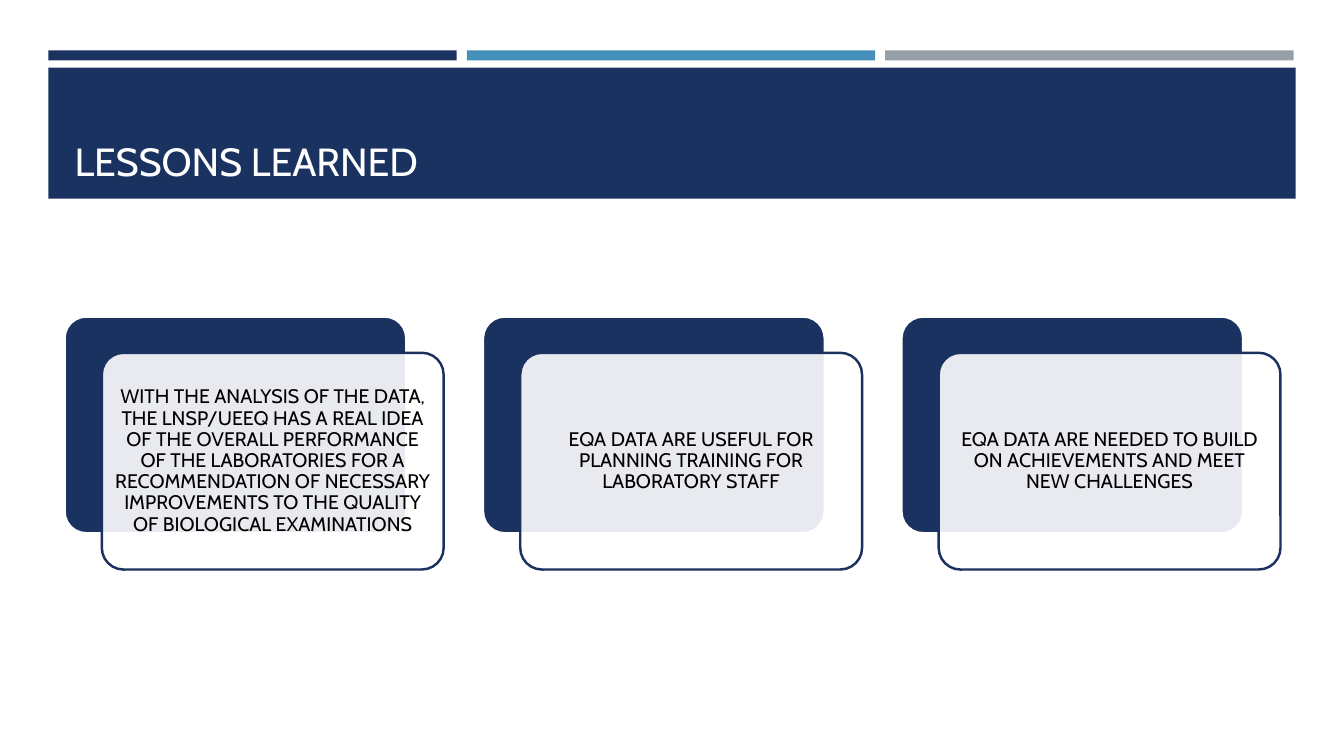
from pptx import Presentation
from pptx.dml.color import RGBColor as Rgb
from pptx.enum.shapes import MSO_SHAPE as Preset
from pptx.enum.text import MSO_ANCHOR as Anchor, PP_ALIGN as Align
from pptx.oxml.ns import qn
from pptx.util import Inches, Pt
from lxml.etree import SubElement

COLORS = {
    "navy": "1A3260",
    "blue": "4590B8",
    "grey": "969FA7",
    "white": "FFFFFF",
    "title": "FFFEFF",
    "text": "000000",
}
FONT = "Cabin"
SLIDE_WIDTH, SLIDE_HEIGHT = 13.33, 7.5
COLUMN_STEP = 4.15
CARD_WIDTH, CARD_HEIGHT = 3.39, 2.15
CARD_SHIFT_X, CARD_SHIFT_Y = 0.37, 0.36
LESSONS = [
    "WITH THE ANALYSIS OF THE DATA, THE LNSP/UEEQ HAS A REAL IDEA OF THE "
    "OVERALL PERFORMANCE OF THE LABORATORIES FOR A RECOMMENDATION OF "
    "NECESSARY IMPROVEMENTS TO THE QUALITY OF BIOLOGICAL EXAMINATIONS",
    "EQA DATA ARE USEFUL FOR PLANNING TRAINING FOR LABORATORY STAFF",
    "EQA DATA ARE NEEDED TO BUILD ON ACHIEVEMENTS AND MEET NEW CHALLENGES",
]


def color(name):
    return Rgb.from_string(COLORS[name])


def add_box(page, preset, left, top, width, height, fill, line=None):
    box = page.shapes.add_shape(
        preset, Inches(left), Inches(top), Inches(width), Inches(height))
    box.shadow.inherit = False
    box.fill.solid()
    box.fill.fore_color.rgb = color(fill)
    if line:
        box.line.color.rgb = color(line)
        box.line.width = Pt(1.75)
    else:
        box.line.fill.background()
    return box


def add_text(para, text, size, fill):
    span = para.add_run()
    span.text = text
    span.font.name = FONT
    span.font.size = Pt(size)
    span.font.color.rgb = color(fill)


def add_header(page, left, top, width):
    # Three accent bars above the title band
    for column, fill in enumerate(("navy", "blue", "grey")):
        add_box(page, Preset.RECTANGLE, left + column * COLUMN_STEP, top,
                4.05, 0.1, fill)
    band = add_box(page, Preset.RECTANGLE, left, top + 0.17, width, 1.3, "navy")

    # Title, in front of its band
    title = page.shapes.title
    title.element.addprevious(band.element)
    title.left, title.top = Inches(left + 0.16), Inches(top + 0.27)
    title.width, title.height = Inches(width - 0.31), Inches(1.11)
    frame = title.text_frame
    frame.word_wrap = True
    frame.vertical_anchor = Anchor.BOTTOM
    para = frame.paragraphs[0]
    para.alignment = Align.LEFT
    add_text(para, "LESSONS LEARNED", 28, "title")


def add_card(page, left, top, lesson):
    # Solid card behind, translucent card in front
    back = add_box(page, Preset.ROUNDED_RECTANGLE, left, top,
                   CARD_WIDTH, CARD_HEIGHT, "navy", "white")
    front = add_box(page, Preset.ROUNDED_RECTANGLE,
                    left + CARD_SHIFT_X, top + CARD_SHIFT_Y,
                    CARD_WIDTH, CARD_HEIGHT, "white", "navy")
    for card in (back, front):
        card.adjustments[0] = 0.1
    fill = front.element.spPr.find(qn("a:solidFill"))
    SubElement(fill[0], qn("a:alpha")).set("val", "90000")

    # Lesson text
    frame = front.text_frame
    frame.word_wrap = True
    frame.vertical_anchor = Anchor.MIDDLE
    frame.margin_left = frame.margin_right = Inches(0.06)
    frame.margin_top = frame.margin_bottom = Inches(0.06)
    para = frame.paragraphs[0]
    para.alignment = Align.CENTER
    para.line_spacing = 0.9
    para.space_after = Pt(5)
    add_text(para, lesson, 14, "text")


def add_lessons(page, left, top):
    for column, lesson in enumerate(LESSONS):
        add_card(page, left + column * COLUMN_STEP, top, lesson)


def main():
    deck = Presentation()
    deck.slide_width, deck.slide_height = Inches(SLIDE_WIDTH), Inches(SLIDE_HEIGHT)
    page = deck.slides.add_slide(deck.slide_layouts[5])
    add_header(page, 0.48, 0.5, 12.37)
    add_lessons(page, 0.64, 3.14)
    deck.save("out.pptx")


if __name__ == "__main__":
    main()
